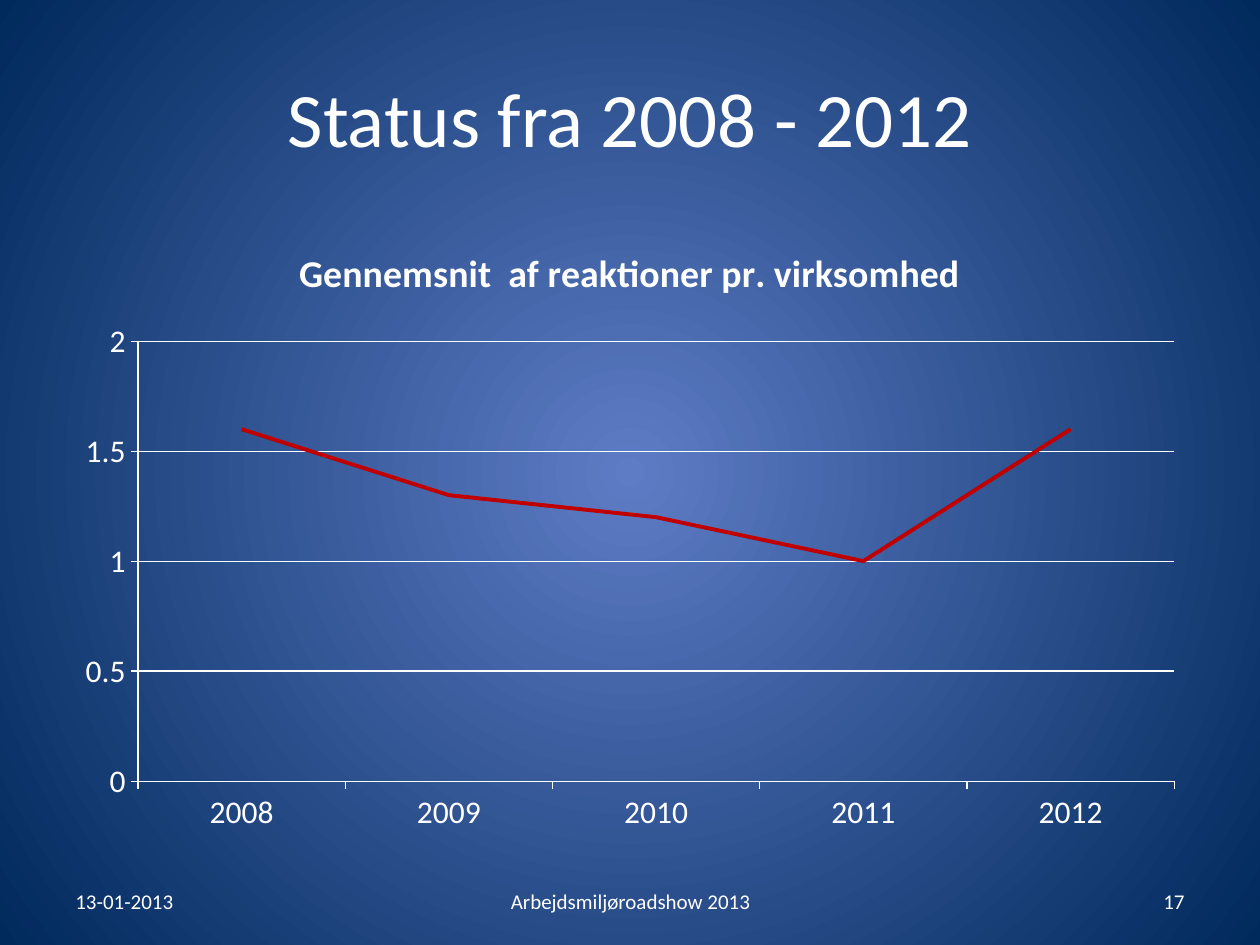
from lxml import etree
from pptx import Presentation
from pptx.chart.data import CategoryChartData
from pptx.dml.color import RGBColor
from pptx.enum import chart as ch, text
from pptx.oxml.ns import qn
from pptx.util import Inches, Pt

WHITE = RGBColor(0xFF, 0xFF, 0xFF)
RED = RGBColor(0xC0, 0x00, 0x00)
GLOW = RGBColor(0x5E, 0x7C, 0xC5)
NAVY = RGBColor(0x00, 0x29, 0x5C)
FONT = "Calibri"

prs = Presentation()
prs.slide_width, prs.slide_height = Inches(10), Inches(7.5)
slide = prs.slides.add_slide(prs.slide_layouts[6])


def style_font(font, size, bold=False):
    font.name, font.size, font.bold = FONT, Pt(size), bold
    font.color.rgb = WHITE


def add_text(words, left, top, width, height, size=12, align=text.PP_ALIGN.LEFT):
    box = slide.shapes.add_textbox(Inches(left), Inches(top), Inches(width), Inches(height))
    frame = box.text_frame
    frame.word_wrap = True
    frame.vertical_anchor = text.MSO_ANCHOR.MIDDLE
    paragraph = frame.paragraphs[0]
    paragraph.alignment = align
    run = paragraph.add_run()
    run.text = words
    style_font(run.font, size)


# Background: light centre fading to navy
backdrop = slide.background.fill
backdrop.gradient()
for stop, color in zip(backdrop.gradient_stops, (GLOW, NAVY)):
    stop.color.rgb = color
gradient = slide.element.find(".//" + qn("a:gradFill"))
gradient.remove(gradient.find(qn("a:lin")))
stops = gradient.find(qn("a:gsLst"))
for stop, position in zip(stops, ("0", "100000")):
    stop.set("pos", position)
circle = etree.Element(qn("a:path"), path="circle")
etree.SubElement(circle, qn("a:fillToRect"), l="50000", t="50000", r="50000", b="50000")
stops.addnext(circle)

add_text("Status fra 2008 - 2012", 0.5, 0.3, 9, 1.25, size=44, align=text.PP_ALIGN.CENTER)

# Reactions per company
heading = "Gennemsnit  af reaktioner pr. virksomhed"
data = CategoryChartData()
data.categories = ["2008", "2009", "2010", "2011", "2012"]
data.add_series(heading, (1.6, 1.3, 1.2, 1, 1.6))
chart = slide.shapes.add_chart(
    ch.XL_CHART_TYPE.LINE_STACKED, Inches(0.5), Inches(1.75), Inches(9), Inches(4.95), data
).chart
style_font(chart.font, 18)
chart.has_legend = False
chart.has_title = True
chart.chart_title.include_in_layout = False
title_run = chart.chart_title.text_frame.paragraphs[0].add_run()
title_run.text = heading
style_font(title_run.font, 21.6, bold=True)

chart.plots[0].vary_by_categories = False
reactions = chart.plots[0].series[0]
reactions.smooth = False
reactions.marker.style = ch.XL_MARKER_STYLE.NONE
reactions.format.line.color.rgb = RED
reactions.format.line.width = Pt(2.25)

values = chart.value_axis
values.minimum_scale, values.maximum_scale, values.major_unit = 0, 2, 0.5
values.has_major_gridlines = True
values.tick_labels.number_format = "General"
values.tick_labels.number_format_is_linked = False
for axis in (chart.category_axis, values):
    axis.major_tick_mark = ch.XL_TICK_MARK.OUTSIDE
    axis.minor_tick_mark = ch.XL_TICK_MARK.NONE
for part in (chart.category_axis, values, values.major_gridlines):
    part.format.line.color.rgb = WHITE
    part.format.line.width = Pt(0.75)

# Footer
for words, left, width, align in (
    ("13-01-2013", 0.5, 2.33, text.PP_ALIGN.LEFT),
    ("Arbejdsmiljøroadshow 2013", 3.42, 3.17, text.PP_ALIGN.CENTER),
    ("17", 7.17, 2.33, text.PP_ALIGN.RIGHT),
):
    add_text(words, left, 6.95, width, 0.4, align=align)

prs.save("out.pptx")
